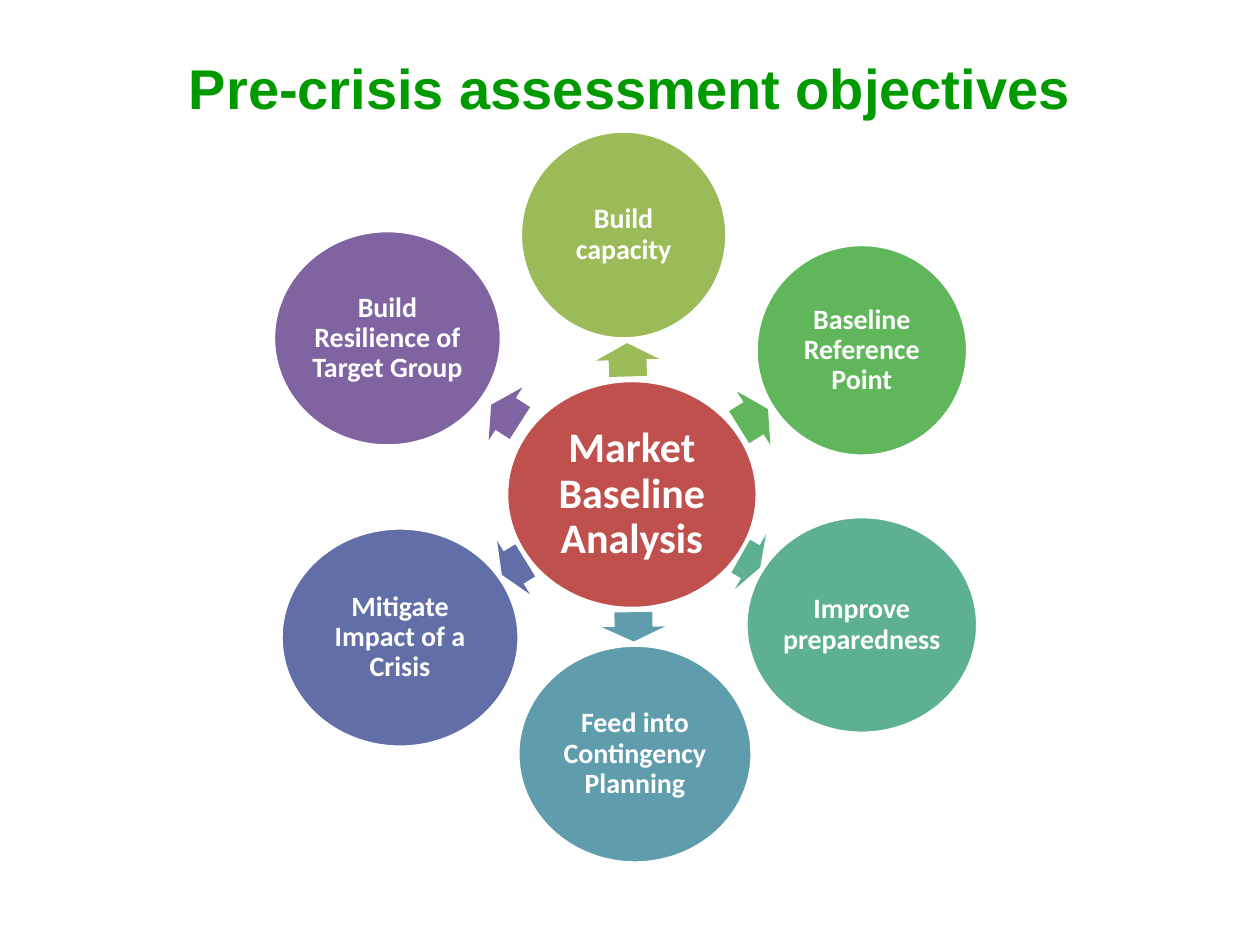
from math import atan2, cos, degrees, hypot, sin

from pptx import Presentation
from pptx.dml.color import RGBColor
from pptx.enum.shapes import MSO_SHAPE
from pptx.enum.text import MSO_ANCHOR, PP_ALIGN
from pptx.util import Inches, Pt

WHITE = RGBColor(0xFF, 0xFF, 0xFF)
TITLE_GREEN = RGBColor(0x00, 0x99, 0x00)
RED = RGBColor(0xC0, 0x50, 0x4D)
OLIVE = RGBColor(0x9B, 0xBB, 0x59)
GREEN = RGBColor(0x5F, 0xB6, 0x5B)
MINT = RGBColor(0x5D, 0xB1, 0x8E)
TEAL = RGBColor(0x5F, 0x9D, 0xAC)
BLUE = RGBColor(0x62, 0x6E, 0xA7)
PURPLE = RGBColor(0x80, 0x64, 0xA2)

TITLE = "Pre-crisis assessment objectives"
HUB_TEXT = "Market Baseline Analysis"
HUB_BOX = (4.02, 3.02, 1.99, 1.81)  # left, top, width, height in inches
OBJECTIVES = [
    ("Build capacity", OLIVE, (4.13, 1.04, 1.64, 1.65)),
    ("Baseline Reference Point", GREEN, (6, 1.94, 1.68, 1.68)),
    ("Improve preparedness", MINT, (5.92, 4.1, 1.84, 1.72)),
    ("Feed into Contingency Planning", TEAL, (4.11, 5.12, 1.86, 1.73)),
    ("Mitigate Impact of a Crisis", BLUE, (2.23, 4.19, 1.89, 1.74)),
    ("Build Resilience of Target Group", PURPLE, (2.17, 1.83, 1.81, 1.71)),
]
ARROW_WIDTH = 0.5
ARROW_MAX_LENGTH = 0.27
ARROW_GAP_SHARE = 0.8


def write(frame, text, font_name, size, color):
    frame.word_wrap = True
    frame.vertical_anchor = MSO_ANCHOR.MIDDLE
    paragraph = frame.paragraphs[0]
    paragraph.alignment = PP_ALIGN.CENTER
    run = paragraph.add_run()
    run.text = text
    run.font.name = font_name
    run.font.size = Pt(size)
    run.font.bold = True
    run.font.color.rgb = color
    return paragraph


def add_filled(slide, kind, box, color):
    shape = slide.shapes.add_shape(kind, *map(Inches, box))
    shape.shadow.inherit = False
    shape.fill.solid()
    shape.fill.fore_color.rgb = color
    shape.line.fill.background()
    return shape


def add_circle(slide, text, color, box, size, inset):
    circle = add_filled(slide, MSO_SHAPE.OVAL, box, color)
    circle.line.color.rgb = WHITE
    circle.line.width = Pt(2)
    frame = circle.text_frame
    frame.margin_left = frame.margin_right = Inches(inset)
    frame.margin_top = frame.margin_bottom = Inches(inset)
    write(frame, text, "Calibri", size, WHITE).line_spacing = 0.9


def center(box):
    left, top, width, height = box
    return left + width / 2, top + height / 2


def radius_towards(box, angle):
    """Distance from an ellipse's center to its edge at the angle."""
    return 1 / hypot(cos(angle) / (box[2] / 2), sin(angle) / (box[3] / 2))


def add_arrow(slide, box, color):
    """Point from the hub to a circle, centered in the gap between them."""
    hub_x, hub_y = center(HUB_BOX)
    x, y = center(box)
    angle = atan2(y - hub_y, x - hub_x)
    start = radius_towards(HUB_BOX, angle)
    end = hypot(x - hub_x, y - hub_y) - radius_towards(box, angle)
    length = min(ARROW_MAX_LENGTH, ARROW_GAP_SHARE * (end - start))
    middle = (start + end) / 2
    left = hub_x + middle * cos(angle) - length / 2
    top = hub_y + middle * sin(angle) - ARROW_WIDTH / 2
    arrow = add_filled(slide, MSO_SHAPE.RIGHT_ARROW,
                       (left, top, length, ARROW_WIDTH), color)
    arrow.adjustments[0] = 0.6
    arrow.adjustments[1] = 0.5
    arrow.rotation = degrees(angle) % 360


def main():
    presentation = Presentation()
    presentation.slide_width = Inches(10)
    presentation.slide_height = Inches(7.5)
    slide = presentation.slides.add_slide(presentation.slide_layouts[6])

    add_circle(slide, HUB_TEXT, RED, HUB_BOX, 24, 0.03)
    for text, color, box in OBJECTIVES:
        add_arrow(slide, box, color)
        add_circle(slide, text, color, box, 16, 0.02)

    title = slide.shapes.add_textbox(Inches(0), Inches(0.26), Inches(10), Inches(0.87))
    write(title.text_frame, TITLE, "Arial", 32, TITLE_GREEN)

    presentation.save("out.pptx")


if __name__ == "__main__":
    main()
